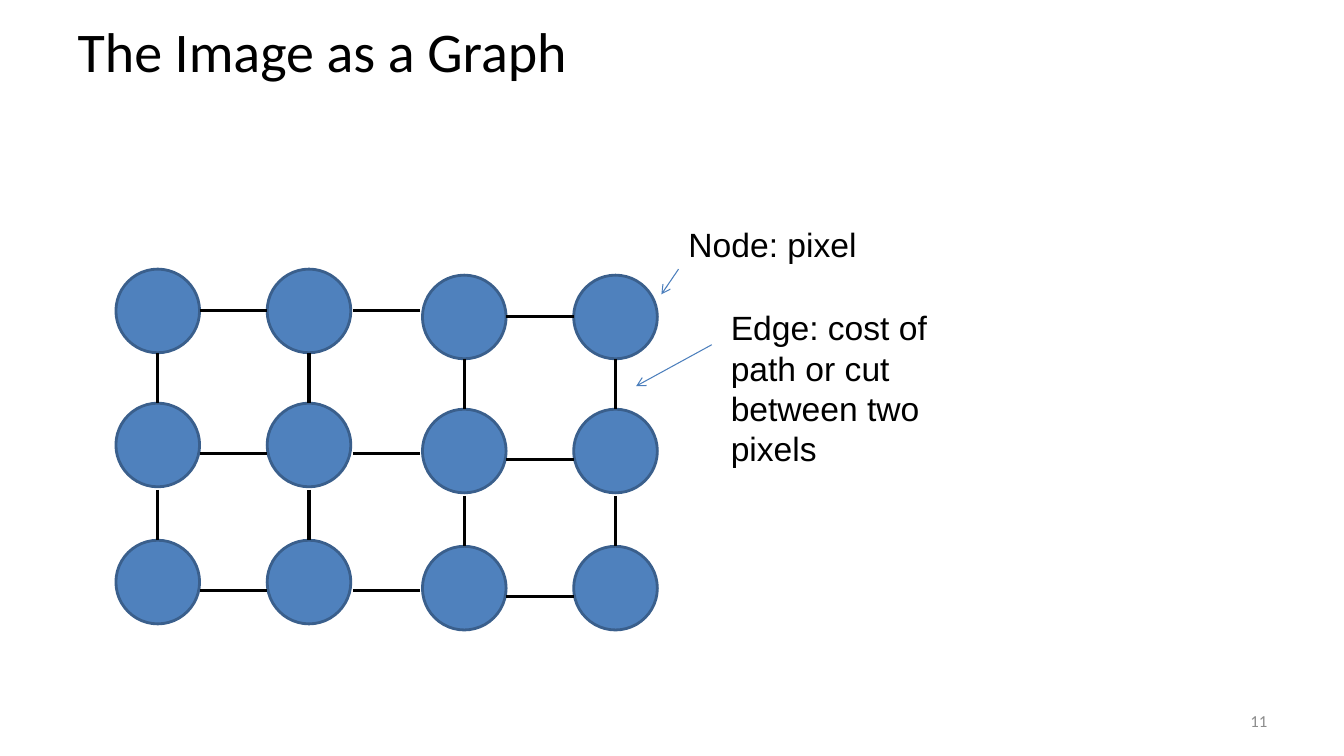
from lxml import etree
from pptx import Presentation
from pptx.dml.color import RGBColor
from pptx.enum.shapes import MSO_CONNECTOR, MSO_SHAPE
from pptx.enum.text import MSO_ANCHOR, MSO_AUTO_SIZE, PP_ALIGN
from pptx.oxml.ns import qn
from pptx.util import Inches, Pt

STRAIGHT = MSO_CONNECTOR.STRAIGHT
ELLIPSE = MSO_SHAPE.OVAL
TOP, MIDDLE = MSO_ANCHOR.TOP, MSO_ANCHOR.MIDDLE
LEFT, RIGHT = PP_ALIGN.LEFT, PP_ALIGN.RIGHT
NO_FIT = MSO_AUTO_SIZE.NONE

COLORS = {
    "text": "000000",
    "node": "4F81BD",
    "outline": "3A5F8C",
    "edge": "000000",
    "pointer": "4B7EBC",
    "number": "8C8C8C",
}

NODE_SIZE = 0.83
COLUMN_LEFTS = [1.15, 2.65, 4.19, 5.69]
COLUMN_DROPS = [0, 0, 0.06, 0.06]
ROW_TOPS = [2.67, 4, 5.36]
ROW_EDGE_HEIGHTS = [3.08, 4.5, 5.86]
EDGE_LEFTS = [1.98, 3.5, 5.02]
EDGE_WIDTH = 0.67
EDGE_HEIGHT = 0.5


def color(name):
    return RGBColor.from_string(COLORS[name])


def write(box, text, size, font, ink="text", align=LEFT, anchor=TOP, wrap=True):
    frame = box.text_frame
    frame_format = {"word_wrap": wrap, "auto_size": NO_FIT, "vertical_anchor": anchor}
    for name, value in frame_format.items():
        setattr(frame, name, value)
    para = frame.paragraphs[0]
    para.alignment = align
    span = para.add_run()
    span.text = text
    for name, value in {"size": Pt(size), "name": font}.items():
        setattr(span.font, name, value)
    span.font.color.rgb = color(ink)


def add_title(page, text):
    title = page.shapes.title
    place = {"left": 0.67, "top": 0, "width": 12, "height": 1}
    for name, value in place.items():
        setattr(title, name, Inches(value))
    write(title, text, 40, "Calibri", anchor=MIDDLE)


def add_label(page, place, text, size=24, font="Arial", **text_format):
    box = page.shapes.add_textbox(*map(Inches, place))
    write(box, text, size, font, **text_format)


def add_node(page, left, top):
    node = page.shapes.add_shape(
        ELLIPSE, *map(Inches, (left, top, NODE_SIZE, NODE_SIZE))
    )
    node.shadow.inherit = False
    node.fill.solid()
    node.fill.fore_color.rgb = color("node")
    node.line.color.rgb = color("outline")
    node.line.width = Pt(2)


def add_line(page, start, end, ink="edge", width=2.25):
    line = page.shapes.add_connector(STRAIGHT, *map(Inches, (*start, *end)))
    line.line.color.rgb = color(ink)
    line.line.width = Pt(width)
    etree.SubElement(line._element.spPr, qn("a:effectLst"))
    return line


def add_pointer(page, start, end):
    pointer = add_line(page, start, end, "pointer", 0.75)
    outline = pointer.line._get_or_add_ln()
    etree.SubElement(outline, qn("a:tailEnd"), type="arrow")


def add_pixel_graph(page):
    for row, row_top in enumerate(ROW_TOPS):
        for left, drop in zip(COLUMN_LEFTS, COLUMN_DROPS):
            top = row_top + drop
            add_node(page, left, top)
            if row > 0:
                middle = left + NODE_SIZE / 2
                add_line(page, (middle, top - EDGE_HEIGHT), (middle, top))
        for left, drop in zip(EDGE_LEFTS, COLUMN_DROPS):
            height = ROW_EDGE_HEIGHTS[row] + drop
            add_line(page, (left, height), (left + EDGE_WIDTH, height))


def main():
    deck = Presentation()
    deck.slide_width = Inches(13.33)
    deck.slide_height = Inches(7.5)
    page = deck.slides.add_slide(deck.slide_layouts.get_by_name("Title Only"))

    add_title(page, "The Image as a Graph")
    add_pixel_graph(page)
    add_label(page, (6.73, 2.17, 1.89, 0.5), "Node: pixel", wrap=False)
    add_pointer(page, (6.73, 2.67), (6.56, 2.92))
    add_pointer(page, (7.06, 3.42), (6.31, 3.83))
    add_label(
        page, (7.15, 3, 2.33, 1.72), "Edge: cost of path or cut between two pixels"
    )
    add_label(
        page, (9.56, 6.95, 3.11, 0.4), "11", 12, "Calibri",
        ink="number", align=RIGHT, anchor=MIDDLE,
    )
    deck.save("out.pptx")


if __name__ == "__main__":
    main()
